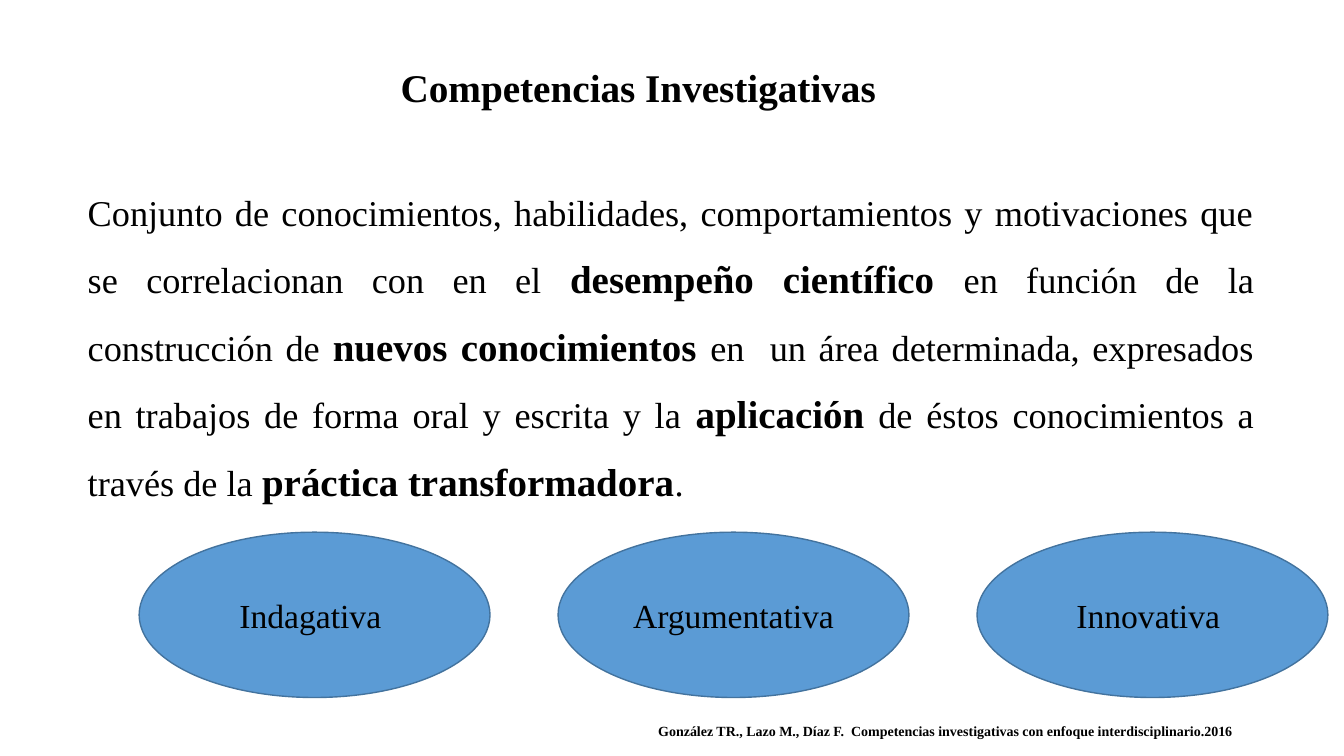
from lxml.etree import SubElement
from pptx import Presentation
from pptx.dml.color import RGBColor
from pptx.enum.shapes import MSO_SHAPE
from pptx.enum.text import MSO_ANCHOR, MSO_AUTO_SIZE, PP_ALIGN
from pptx.oxml.ns import qn
from pptx.util import Inches, Pt

FONT = "Times New Roman"
BLACK = "000000"
DEFINITION = [
    ("Conjunto de conocimientos, habilidades, comportamientos y motivaciones que se correlacionan con en el ", False),
    ("desempeño científico ", True),
    ("en función de la construcción de ", False),
    ("nuevos conocimientos ", True),
    ("en  un área determinada, expresados en trabajos de forma oral y escrita y la ", False),
    ("aplicación", True),
    (" de éstos conocimientos a través de la ", False),
    ("práctica transformadora", True),
    (".", False),
]
COMPETENCIES = ["Indagativa ", "Argumentativa", "Innovativa "]
CITATION = "González TR., Lazo M., Díaz F.  Competencias investigativas con enfoque interdisciplinario.2016"


def color(value):
    return RGBColor.from_string(value)


def set_font(font, size, bold=False):
    font.name = FONT
    font.size = Pt(size)
    font.bold = bold
    font.color.rgb = color(BLACK)


def place(shape, left, top, width, height):
    shape.left, shape.top = Inches(left), Inches(top)
    shape.width, shape.height = Inches(width), Inches(height)


def add_title(page, left, top, width, height):
    title = page.shapes.title
    place(title, left, top, width, height)
    frame = title.text_frame
    frame.text = "Competencias Investigativas"
    frame.auto_size = MSO_AUTO_SIZE.NONE
    frame.vertical_anchor = MSO_ANCHOR.MIDDLE
    frame.margin_right = Inches(0.3)
    para = frame.paragraphs[0]
    para.alignment = PP_ALIGN.CENTER
    para.line_spacing = 0.9
    set_font(para.font, 28, True)


def add_definition(page, left, top, width, height):
    body = page.placeholders[1]
    place(body, left, top, width, height)
    frame = body.text_frame
    frame.auto_size = MSO_AUTO_SIZE.NONE
    frame.vertical_anchor = MSO_ANCHOR.TOP
    para = frame.paragraphs[0]
    para.alignment = PP_ALIGN.JUSTIFY
    para.line_spacing = 1.45
    para.space_before = Pt(10)
    properties = para._p.get_or_add_pPr()
    properties.set("marL", "0")
    properties.set("indent", "0")
    SubElement(properties, qn("a:buNone"))
    for text, emphasized in DEFINITION:
        span = para.add_run()
        span.text = text
        set_font(span.font, 27.8 if emphasized else 25.9, emphasized)


def add_competencies(page, left, top, width, height):
    oval_width = 3.48
    step = (width - oval_width) / (len(COMPETENCIES) - 1)
    for index, name in enumerate(COMPETENCIES):
        oval = page.shapes.add_shape(
            MSO_SHAPE.OVAL, Inches(left + index * step), Inches(top), Inches(oval_width), Inches(height))
        oval.shadow.inherit = False
        oval.fill.solid()
        oval.fill.fore_color.rgb = color("5B9BD5")
        oval.line.color.rgb = color("43739E")
        oval.line.width = Pt(1)
        oval.text_frame.text = name
        oval.text_frame.vertical_anchor = MSO_ANCHOR.MIDDLE
        para = oval.text_frame.paragraphs[0]
        para.alignment = PP_ALIGN.CENTER
        set_font(para.font, 24)


def add_citation(page, left, top, width, height):
    box = page.shapes.add_textbox(Inches(left), Inches(top), Inches(width), Inches(height))
    frame = box.text_frame
    frame.word_wrap = True
    frame.auto_size = MSO_AUTO_SIZE.SHAPE_TO_FIT_TEXT
    frame.text = CITATION
    set_font(frame.paragraphs[0].font, 10, True)


def main():
    deck = Presentation()
    deck.slide_width, deck.slide_height = Inches(13.33), Inches(7.5)
    page = deck.slides.add_slide(deck.slide_layouts[1])
    add_title(page, 3.51, 0.46, 5.84, 0.87)
    add_definition(page, 0.77, 1.64, 11.77, 3.33)
    add_competencies(page, 1.38, 5.28, 11.79, 1.64)
    add_citation(page, 6.43, 7.12, 6.11, 0.27)
    deck.save("out.pptx")


if __name__ == "__main__":
    main()
